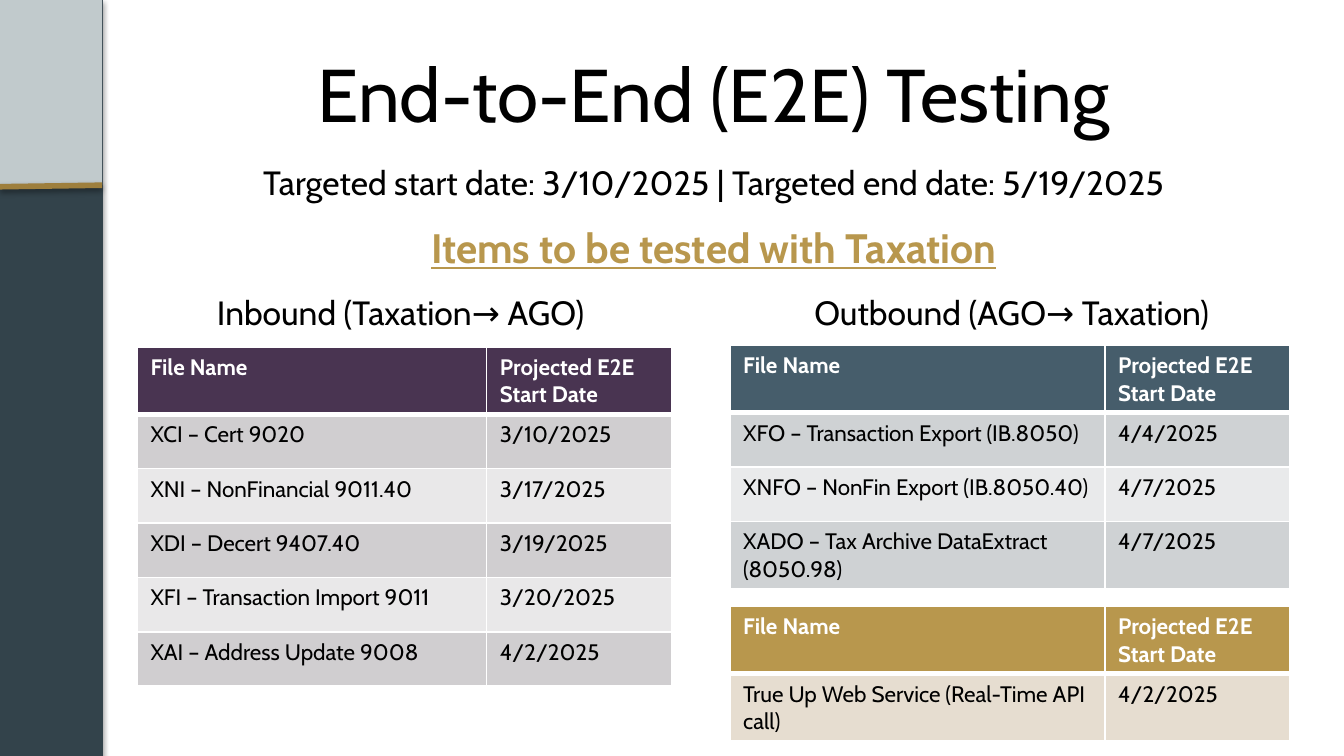
from lxml.etree import SubElement as Sub
from pptx import Presentation
from pptx.dml.color import RGBColor as RGB
from pptx.enum.shapes import MSO_CONNECTOR as Conn, MSO_SHAPE as Kind
from pptx.enum.text import MSO_ANCHOR as Anchor, PP_ALIGN as Align
from pptx.oxml.ns import qn
from pptx.util import Inches, Pt

W, H = Inches(10), Inches(10) * 9 // 16
BLACK, WHITE = RGB(0, 0, 0), RGB(255, 255, 255)
SLATE, MIST = RGB(0x33, 0x43, 0x4B), RGB(0xC1, 0xCA, 0xCC)
BRONZE, GOLD = RGB(0x9E, 0x7F, 0x3D), RGB(0xB8, 0x97, 0x4D)
PLUM, STEEL = RGB(0x49, 0x34, 0x51), RGB(0x46, 0x5D, 0x6B)
PLUM_BANDS = RGB(0xD0, 0xCE, 0xD0), RGB(0xE9, 0xE8, 0xE9)
STEEL_BANDS = RGB(0xCF, 0xD2, 0xD4), RGB(0xE9, 0xEA, 0xEB)
SAND = RGB(0xE6, 0xDD, 0xD0)
DATE, ROW = W * 138 // 1000, H * 72 // 1000  # date column, least row height
HEADS = "File Name", "Projected E2E Start Date"

INBOUND = [
    ("XCI – Cert 9020", "3/10/2025"),
    ("XNI – NonFinancial 9011.40", "3/17/2025"),
    ("XDI – Decert 9407.40", "3/19/2025"),
    ("XFI – Transaction Import 9011", "3/20/2025"),
    ("XAI – Address Update 9008", "4/2/2025"),
]
OUTBOUND = [
    ("XFO – Transaction Export (IB.8050)", "4/4/2025"),
    ("XNFO – NonFin Export (IB.8050.40)", "4/7/2025"),
    ("XADO – Tax Archive DataExtract (8050.98)", "4/7/2025"),
]
SERVICE = [("True Up Web Service (Real-Time API call)", "4/2/2025")]


def area(left, top, width, height):
    """Turn percentages of the slide into a box of lengths."""
    return int(W * left / 100), int(H * top / 100), int(W * width / 100), int(H * height / 100)


def style(run, size, color=BLACK, **more):
    font = run.font
    font.color.rgb = color
    for key, value in {"name": "Cabin", "size": Pt(size), **more}.items():
        setattr(font, key, value)


def shade(shape, alpha, dist):
    """Give a shape a soft shadow straight below it."""
    effects = Sub(shape._element.spPr, qn("a:effectLst"))
    shadow = Sub(effects, qn("a:outerShdw"), blurRad=str(Pt(3.1)), dist=str(Pt(dist)),
                 dir="5400000", rotWithShape="0")
    color = Sub(shadow, qn("a:srgbClr"), val="000000")
    Sub(color, qn("a:alpha"), val=str(alpha * 1000))


def sidebar(slide, box):
    left, top, width, height = box
    split = top + height * 245 // 1000
    for fill, bottom in ((SLATE, top + height), (MIST, split)):
        panel = slide.shapes.add_shape(Kind.RECTANGLE, left, top, width, bottom - top)
        panel.fill.solid()
        panel.fill.fore_color.rgb = fill
        if fill == SLATE:
            panel.line.color.rgb = SLATE
            panel.line.width = Pt(0.75)
            shade(panel, 35, 1.8)
        else:
            panel.line.fill.background()
            panel.shadow.inherit = False
    rule = slide.shapes.add_connector(
        Conn.STRAIGHT, left, split + height // 500, left + width, split)
    rule.line.color.rgb = BRONZE
    rule.line.width = Pt(3)
    shade(rule, 38, 1.6)


def text_box(slide, box):
    frame = slide.shapes.add_textbox(*box).text_frame
    frame.word_wrap = True
    return frame


def title(slide, box):
    frame = text_box(slide, box)
    frame.vertical_anchor = Anchor.MIDDLE
    para = frame.paragraphs[0]
    para.alignment = Align.CENTER
    run = para.add_run()
    run.text = "End-to-End (E2E) Testing"
    style(run, 40)


def intro(slide, box):
    """Write the dates, the subject, and a heading centred above each side."""
    frame = text_box(slide, box)
    lines = [
        ("Targeted start date: 3/10/2025 | Targeted end date: 5/19/2025", 18, {}),
        ("Items to be tested with Taxation", 22,
         {"color": GOLD, "bold": True, "underline": True}),
        ("\tInbound (Taxation→ AGO)\tOutbound (AGO→ Taxation)", 18, {}),
    ]
    for i, (words, size, look) in enumerate(lines):
        para = frame.add_paragraph() if i else frame.paragraphs[0]
        para.space_before = Pt(11 if i else 0)
        para.alignment = Align.CENTER
        run = para.add_run()
        run.text = words
        style(run, size, **look)
    para.alignment = Align.LEFT
    tabs = Sub(para._p.get_or_add_pPr(), qn("a:tabLst"))
    for share in (0.217, 0.747):
        Sub(tabs, qn("a:tab"), pos=str(int(box[2] * share)), algn="ctr")


def edge(cell, foot):
    """Draw white cell borders, with a foot of the given points."""
    props = cell._tc.get_or_add_tcPr()
    for side, width in zip("LRTB", (1, 1, 1, foot)):
        line = Sub(props, qn(f"a:ln{side}"), w=str(Pt(width)))
        Sub(Sub(line, qn("a:solidFill")), qn("a:srgbClr"), val=str(WHITE))


def schedule(slide, box, rows, head, bands):
    left, top, width, _ = box
    grid = slide.shapes.add_table(
        len(rows) + 1, 2, left, top, width, ROW * (len(rows) + 1)).table
    grid.columns[0].width, grid.columns[1].width = width - DATE, DATE
    for r, row in enumerate([HEADS, *rows]):
        grid.rows[r].height = ROW
        for c, words in enumerate(row):
            cell = grid.cell(r, c)
            edge(cell, 1 if r else 3)
            cell.fill.solid()
            cell.fill.fore_color.rgb = bands[(r - 1) % len(bands)] if r else head
            run = cell.text_frame.paragraphs[0].add_run()
            run.text = words
            style(run, 12, BLACK if r else WHITE, bold=not r)


def main():
    deck = Presentation()
    deck.slide_width, deck.slide_height = W, H
    slide = deck.slides.add_slide(deck.slide_layouts[6])
    sidebar(slide, area(0, 0, 7.6, 100))
    title(slide, area(10.2, 3.9, 85.8, 16.7))
    intro(slide, area(10.2, 20.5, 85.8, 25.1))
    schedule(slide, area(10.2, 45.9, 39.8, 45), INBOUND, PLUM, PLUM_BANDS)
    schedule(slide, area(54.3, 45.7, 41.7, 32.2), OUTBOUND, STEEL, STEEL_BANDS)
    schedule(slide, area(54.3, 80.2, 41.7, 17.8), SERVICE, GOLD, [SAND])
    deck.save("out.pptx")


if __name__ == "__main__":
    main()
